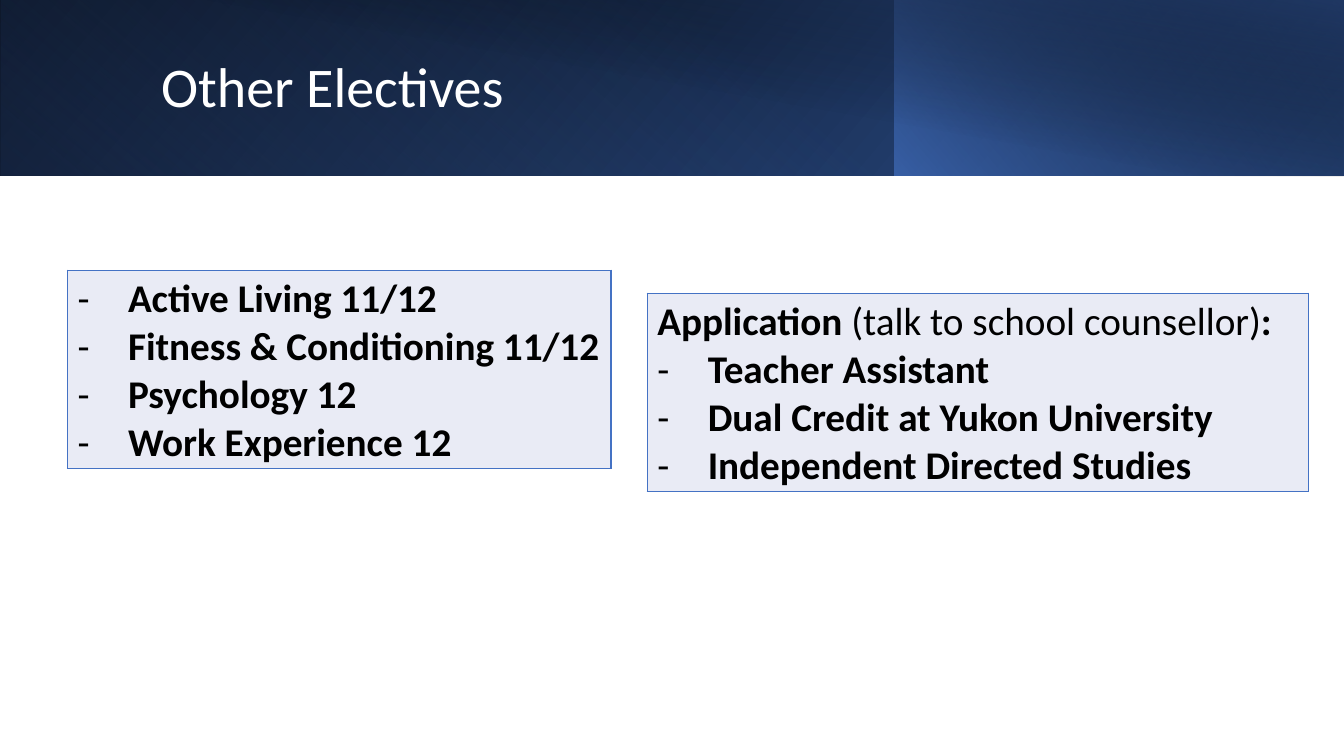
from lxml.etree import SubElement
from pptx import Presentation
from pptx.dml.color import RGBColor
from pptx.enum.shapes import MSO_SHAPE as Shape
from pptx.enum.text import MSO_ANCHOR as Anchor
from pptx.oxml.ns import qn
from pptx.util import Inches, Pt

FONT = "Calibri"
WHITE, BLACK = "FFFFFF", "000000"
BLUE, NAVY, MID_BLUE, PALE = "4472C4", "203864", "2F5597", "E9EBF5"

# left, width, height, flipped, rotation, angle, stops (position, colour, opacity)
BANNER = [
    (0, 13.33, 1.74, True, 0, 140, [(0, BLACK, 100), (100, MID_BLUE, 100)]),
    (0, 8.88, 1.74, True, 180, 230, [(20, BLUE, 0), (100, NAVY, 55)]),
    (8.87, 4.46, 1.74, True, 0, 220, [(0, BLUE, 66), (100, BLACK, 30)]),
    (0.5, 12.83, 1.75, False, 0, 280, [(50, BLACK, 0), (99, NAVY, 52)]),
]

# Each line is (bulleted, [(text, bold), ...])
COURSES = [
    (True, [(name, True)])
    for name in ("Active Living 11/12", "Fitness & Conditioning 11/12",
                 "Psychology 12", "Work Experience 12")
]
APPLICATIONS = [
    (False, [("Application ", True), ("(talk to school counsellor)", False),
             (":", True)])
] + [
    (True, [(name, True)])
    for name in ("Teacher Assistant", "Dual Credit at Yukon University",
                 "Independent Directed Studies")
]


def rgb(colour):
    return RGBColor.from_string(colour)


def add_span(para, text, colour, **formats):
    span = para.add_run()
    span.text = text
    span.font.color.rgb = rgb(colour)
    for name, value in {"name": FONT, **formats}.items():
        setattr(span.font, name, value)


def add_colour(parent, colour, opacity=100):
    """Append an RGB colour, with an opacity in percent, to an XML fill."""
    node = SubElement(parent, qn("a:srgbClr"), val=colour)
    if opacity < 100:
        SubElement(node, qn("a:alpha"), val=str(opacity * 1000))


def add_gradient(slide, left, width, height, flipped, rotation, angle, stops):
    panel = slide.shapes.add_shape(Shape.RECTANGLE, Inches(left), 0,
                                   Inches(width), Inches(height))
    panel.rotation = rotation
    properties = panel.element.spPr
    if flipped:
        properties.find(qn("a:xfrm")).set("flipH", "1")
    gradient = SubElement(properties, qn("a:gradFill"), rotWithShape="1")
    stop_list = SubElement(gradient, qn("a:gsLst"))
    for position, colour, opacity in stops:
        stop = SubElement(stop_list, qn("a:gs"), pos=str(position * 1000))
        add_colour(stop, colour, opacity)
    SubElement(gradient, qn("a:lin"), ang=str(angle * 60000), scaled="0")
    panel.line.fill.background()
    panel.shadow.inherit = False


def add_title(slide, text):
    box = slide.shapes.add_textbox(Inches(1.5), Inches(0.32),
                                   Inches(10.82), Inches(1.13))
    frame = box.text_frame
    frame.word_wrap = True
    frame.vertical_anchor = Anchor.MIDDLE
    para = frame.paragraphs[0]
    para.line_spacing = 0.9
    add_span(para, text, WHITE, size=Pt(40))


def add_dash(para):
    properties = para._p.get_or_add_pPr()
    properties.set("marL", str(Inches(0.5)))
    properties.set("indent", str(Inches(-0.5)))
    SubElement(properties, qn("a:buFont"), typeface=FONT)
    SubElement(properties, qn("a:buChar"), char="-")


def add_borders(cell):
    """Outline a cell; call before its fill is set, as borders come first."""
    properties = cell._tc.get_or_add_tcPr()
    for side in ("lnL", "lnR", "lnT", "lnB"):
        line = SubElement(properties, qn(f"a:{side}"), w=str(Pt(1)))
        add_colour(SubElement(line, qn("a:solidFill")), BLUE)


def add_list_table(slide, left, top, width, lines):
    table = slide.shapes.add_table(1, 1, Inches(left), Inches(top),
                                   Inches(width), Inches(1.97)).table
    table.first_row = table.horz_banding = False
    cell = table.cell(0, 0)
    add_borders(cell)
    cell.fill.solid()
    cell.fill.fore_color.rgb = rgb(PALE)
    frame = cell.text_frame
    for index, (bulleted, spans) in enumerate(lines):
        para = frame.add_paragraph() if index else frame.paragraphs[0]
        if bulleted:
            add_dash(para)
        for text, bold in spans:
            add_span(para, text, BLACK, size=Pt(28), bold=bold)


def main():
    deck = Presentation()
    deck.slide_width, deck.slide_height = Inches(13.33), Inches(7.5)
    slide = deck.slides.add_slide(deck.slide_layouts[6])
    for panel in BANNER:
        add_gradient(slide, *panel)
    add_title(slide, "Other Electives")
    add_list_table(slide, 0.67, 2.68, 5.39, COURSES)
    add_list_table(slide, 6.42, 2.91, 6.56, APPLICATIONS)
    deck.save("out.pptx")


if __name__ == "__main__":
    main()
